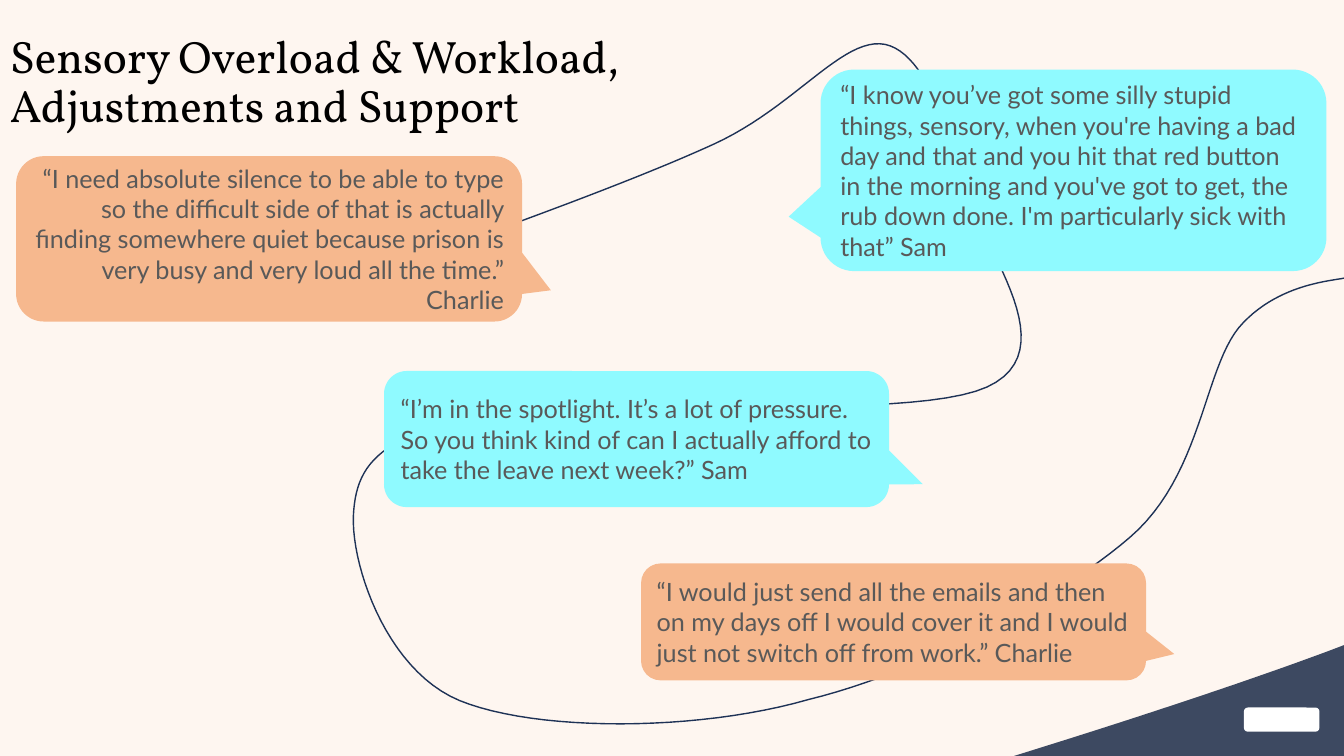
import pptx
import pptx.dml.color
import pptx.enum.shapes
import pptx.enum.text
import pptx.util

Pt = pptx.util.Pt
RGBColor = pptx.dml.color.RGBColor
MSO_SHAPE = pptx.enum.shapes.MSO_SHAPE
MSO_ANCHOR = pptx.enum.text.MSO_ANCHOR
PP_ALIGN = pptx.enum.text.PP_ALIGN

CREAM = RGBColor(0xFE, 0xF6, 0xF0)
NAVY = RGBColor(0x1E, 0x32, 0x56)
SLATE = RGBColor(0x3D, 0x49, 0x61)
AQUA = RGBColor(0x8F, 0xFA, 0xFF)
PEACH = RGBColor(0xF6, 0xB8, 0x8E)
GREY = RGBColor(0x59, 0x59, 0x59)
BLACK = RGBColor(0, 0, 0)
WHITE = RGBColor(0xFF, 0xFF, 0xFF)

CURVE_STEPS = 24

TRAIL_START = (282.2, 190.8)
TRAIL_CURVES = [
    ((367.2, 159.8), (451.4, 129.6), (509.8, 103)),
    ((568.1, 76.3), (601.9, 25.9), (632.2, 31.7)),
    ((662.4, 38.2), (679.7, 98.6), (691.9, 139.7)),
    ((703.4, 180), (761.8, 250.6), (704.9, 276.5)),
    ((647.3, 302.4), (423.4, 281.5), (348.5, 295.9)),
    ((272.9, 310.3), (255.6, 330.5), (252.7, 364.3)),
    ((249.1, 398.9), (274.3, 478.1), (328.3, 500.4)),
    ((383, 522.7), (497.5, 522.7), (577.4, 499.7)),
    ((657.4, 480.2), (755.3, 428.4), (807.1, 383.8)),
    ((858.2, 339.8), (859.7, 265), (884.9, 234)),
    ((910.8, 203.8), (948.2, 200.9), (960, 198.7)),
]
CORNER_START = (960, 460.8)
CORNER_CURVES = [((960, 460.8), (889.2, 488.9), (724.3, 540))]

# Box, callout tip, fill, alignment, words
QUOTES = [
    ((586.1, 49.7, 361.4, 144), (-0.563, 0.23), AQUA, PP_ALIGN.LEFT,
     "“I know you’ve got some silly stupid things, sensory, when you're having "
     "a bad day and that and you hit that red button in the morning and you've "
     "got to get, the rub down done. I'm particularly sick with that” Sam"),
    ((11.5, 111.6, 361.4, 118.1), (0.557, 0.311), PEACH, PP_ALIGN.RIGHT,
     "“I need absolute silence to be able to type so the difficult side of that "
     "is actually finding somewhere quiet because prison is very busy and very "
     "loud all the time.” Charlie"),
    ((274.3, 265, 360.7, 97.2), (0.567, 0.332), AQUA, PP_ALIGN.LEFT,
     "“I’m in the spotlight. It’s a lot of pressure. So you think kind of can I "
     "actually afford to take the leave next week?” Sam"),
    ((457.9, 402.5, 360.7, 83.5), (0.556, 0.275), PEACH, PP_ALIGN.LEFT,
     "“I would just send all the emails and then on my days off I would cover "
     "it and I would just not switch off from work.” Charlie"),
]


def curve_points(start, curves):
    """Return points along a chain of cubic Bézier curves, start excluded."""
    points = []
    for c1, c2, end in curves:
        for i in range(1, CURVE_STEPS + 1):
            t = i / CURVE_STEPS
            u = 1 - t
            points.append(tuple(
                u**3 * a + 3 * u * u * t * b + 3 * u * t * t * c + t**3 * d
                for a, b, c, d in zip(start, c1, c2, end)))
        start = end
    return points


def add_outline(slide, start, points, close):
    builder = slide.shapes.build_freeform(Pt(start[0]), Pt(start[1]))
    builder.add_line_segments([(Pt(x), Pt(y)) for x, y in points], close=close)
    sp = builder.convert_to_shape()
    sp.shadow.inherit = False
    return sp


def fill_plain(sp, color):
    sp.shadow.inherit = False
    sp.fill.solid()
    sp.fill.fore_color.rgb = color
    sp.line.fill.background()


def add_plain_shape(slide, kind, box, color):
    sp = slide.shapes.add_shape(kind, *map(Pt, box))
    fill_plain(sp, color)
    return sp


def set_text(sp, text, font, size, color, align=PP_ALIGN.LEFT):
    tf = sp.text_frame
    tf.text = text
    tf.word_wrap = True
    tf.vertical_anchor = MSO_ANCHOR.MIDDLE
    p = tf.paragraphs[0]
    p.alignment = align
    r = p.runs[0]
    r.font.name = font
    r.font.size = Pt(size)
    r.font.color.rgb = color
    return p


def add_title(slide, text):
    sp = slide.shapes.add_textbox(Pt(0), Pt(7.2), Pt(480), Pt(104.4))
    p = set_text(sp, text, "Vollkorn", 32.4, BLACK)
    p.line_spacing = 0.9


def add_quote(slide, box, tip, color, align, text):
    sp = add_plain_shape(slide, MSO_SHAPE.ROUNDED_RECTANGULAR_CALLOUT, box, color)
    sp.adjustments[0], sp.adjustments[1] = tip
    sp.adjustments[2] = 0.167
    set_text(sp, text, "Lato", 18, GREY, align)


def main():
    prs = pptx.Presentation()
    prs.slide_width, prs.slide_height = Pt(960), Pt(540)
    slide = prs.slides.add_slide(prs.slide_layouts[6])
    slide.background.fill.solid()
    slide.background.fill.fore_color.rgb = CREAM

    trail = add_outline(slide, TRAIL_START,
                        curve_points(TRAIL_START, TRAIL_CURVES), close=False)
    trail.fill.background()
    trail.line.color.rgb = NAVY
    trail.line.width = Pt(1)

    add_title(slide, "Sensory Overload & Workload, Adjustments and Support")
    for quote in QUOTES:
        add_quote(slide, *quote)

    corner = curve_points(CORNER_START, CORNER_CURVES) + [(960, 540)]
    fill_plain(add_outline(slide, CORNER_START, corner, close=True), SLATE)
    add_plain_shape(slide, MSO_SHAPE.ROUNDED_RECTANGLE,
                    (888.5, 505.4, 54, 17.3), WHITE)

    prs.save("out.pptx")


if __name__ == "__main__":
    main()
